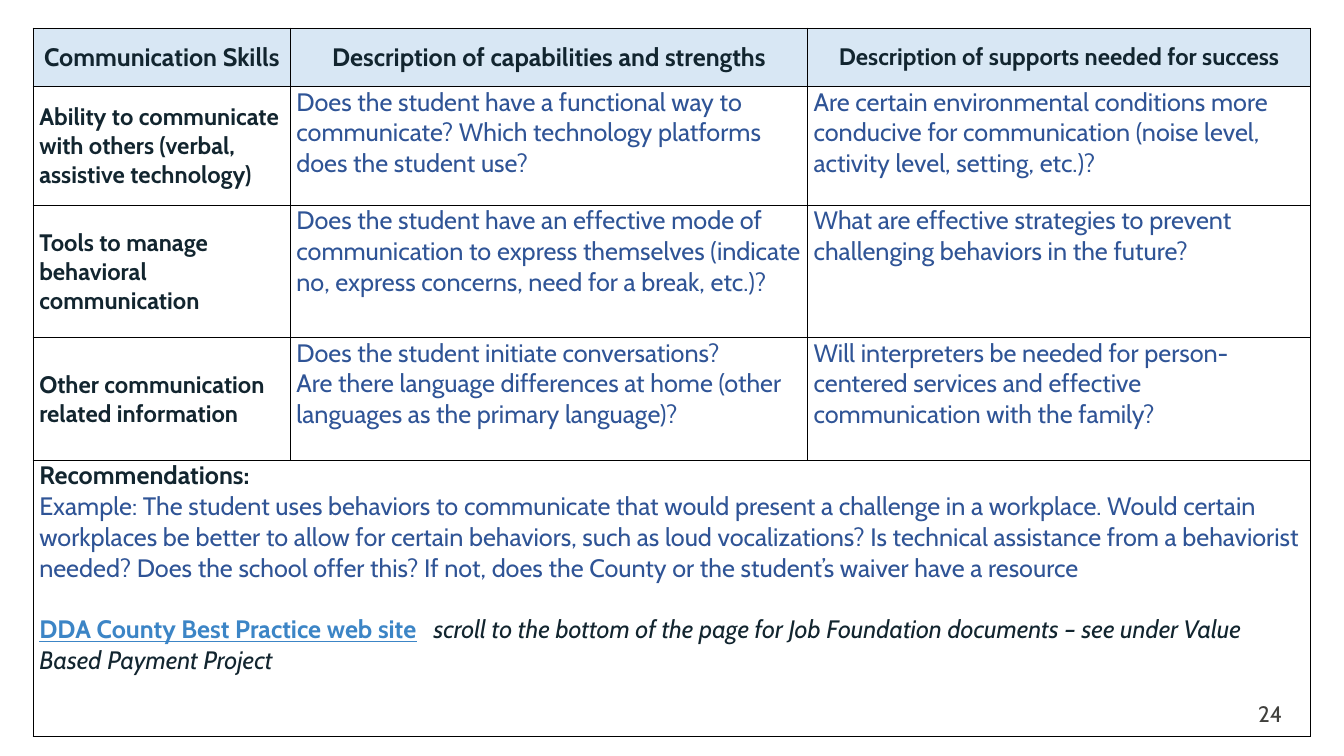
from lxml import etree
from pptx import Presentation
from pptx import util as u
from pptx.dml import color
from pptx.enum import text
from pptx.oxml import ns

FONT = "Cabin"
COLOURS = {
    "ink": "12252F",
    "prompt": "2F5496",
    "link": "3C85C6",
    "header": "D8E7F4",
    "border": "000000",
    "number": "40403D",
}
COLUMN_WIDTHS = [2.55, 5.13, 4.99]
ROW_HEIGHTS = [0.58, 1.18, 1.31, 1.22, 2.74]
HEADINGS = [
    ("Communication Skills", 18),
    ("Description of capabilities and strengths", 18),
    ("Description of supports needed for success", 17),
]
SKILLS = [
    (
        "Ability to communicate with others (verbal, assistive technology)",
        "Does the student have a functional way to communicate? "
        "Which technology platforms does the student use?",
        "Are certain environmental conditions more conducive for communication "
        "(noise level, activity level, setting, etc.)?",
    ),
    (
        "Tools to manage behavioral communication",
        "Does the student have an effective mode of communication to express "
        "themselves (indicate no, express concerns, need for a break, etc.)?",
        "What are effective strategies to prevent challenging behaviors in the future?",
    ),
    (
        "Other communication related information",
        "Does the student initiate conversations?\n"
        "Are there language differences at home (other languages as the primary language)?",
        "Will interpreters be needed for person-centered services and effective "
        "communication with the family?",
    ),
]
EXAMPLE = (
    "Example: The student uses behaviors to communicate that would present a challenge "
    "in a workplace. Would certain workplaces be better to allow for certain behaviors, "
    "such as loud vocalizations? Is technical assistance from a behaviorist needed? "
    "Does the school offer this? If not, does the County or the student’s waiver "
    "have a resource"
)
SITE = "DDA County Best Practice web site"
SITE_HINT = (
    "\tscroll to the bottom of the page for Job Foundation documents – "
    "see under Value Based Payment Project"
)


def rgb(name):
    return color.RGBColor.from_string(COLOURS[name])


def style_span(span, size, colour, bold=False, italic=False, underline=False):
    font = span.font
    font.name, font.size = FONT, u.Pt(size)
    font.bold, font.italic, font.underline = bold, italic, underline
    font.color.rgb = rgb(colour)


def write(frame, words, size, colour, bold=False, align=text.PP_ALIGN.LEFT):
    frame.text = words
    for para in frame.paragraphs:
        para.alignment = align
        for span in para.runs:
            style_span(span, size, colour, bold)


def add_border(cell):
    properties = cell._tc.get_or_add_tcPr()
    for side in ("a:lnL", "a:lnR", "a:lnT", "a:lnB"):
        line = etree.SubElement(properties, ns.qn(side), w=str(u.Pt(1)))
        fill = etree.SubElement(line, ns.qn("a:solidFill"))
        etree.SubElement(fill, ns.qn("a:srgbClr"), val=COLOURS["border"])


def add_tab_stop(para, position):
    stops = etree.SubElement(para._p.get_or_add_pPr(), ns.qn("a:tabLst"))
    etree.SubElement(stops, ns.qn("a:tab"), pos=str(position), algn="l")


def add_grid(page):
    frame = page.shapes.add_table(
        len(ROW_HEIGHTS), len(COLUMN_WIDTHS), u.Inches(0.33), u.Inches(0.28),
        u.Inches(sum(COLUMN_WIDTHS)), u.Inches(sum(ROW_HEIGHTS)),
    )
    table = frame.table
    table.horz_banding = False
    for column, width in zip(table.columns, COLUMN_WIDTHS):
        column.width = u.Inches(width)
    for row, height in zip(table.rows, ROW_HEIGHTS):
        row.height = u.Inches(height)
    for cell in table.iter_cells():
        cell.margin_left = cell.margin_right = u.Inches(0.06)
        cell.margin_top = cell.margin_bottom = 0
        add_border(cell)
        cell.fill.background()
    return table


def fill_headings(table):
    for column, (words, size) in enumerate(HEADINGS):
        cell = table.cell(0, column)
        cell.fill.solid()
        cell.fill.fore_color.rgb = rgb("header")
        cell.vertical_anchor = text.MSO_ANCHOR.MIDDLE
        write(cell.text_frame, words, size, "ink", True, text.PP_ALIGN.CENTER)


def fill_skills(table):
    for row, (skill, *prompts) in enumerate(SKILLS, start=1):
        label = table.cell(row, 0)
        label.vertical_anchor = text.MSO_ANCHOR.MIDDLE
        write(label.text_frame, skill, 17, "ink", True)
        for column, prompt in enumerate(prompts, start=1):
            write(table.cell(row, column).text_frame, prompt, 18, "prompt")


def fill_recommendations(table):
    last = len(ROW_HEIGHTS) - 1
    cell = table.cell(last, 0)
    cell.merge(table.cell(last, len(COLUMN_WIDTHS) - 1))
    frame = cell.text_frame
    write(frame, "Recommendations:\n" + EXAMPLE, 18, "prompt")
    style_span(frame.paragraphs[0].runs[0], 18, "ink", bold=True)
    para = frame.add_paragraph()
    para.space_before = u.Pt(22)
    add_tab_stop(para, u.Inches(3.91))
    para.text = SITE
    style_span(para.runs[0], 18, "link", bold=True, underline=True)
    hint = para.add_run()
    hint.text = SITE_HINT
    style_span(hint, 18, "ink", italic=True)


def add_page_number(page, number):
    box = page.shapes.add_textbox(
        u.Inches(12.38), u.Inches(6.9), u.Inches(0.7), u.Inches(0.4)
    )
    box.text_frame.word_wrap = True
    write(box.text_frame, number, 16, "number")


def main():
    deck = Presentation()
    deck.slide_width, deck.slide_height = u.Inches(13.33), u.Inches(7.5)
    page = deck.slides.add_slide(deck.slide_layouts[6])
    table = add_grid(page)
    fill_headings(table)
    fill_skills(table)
    fill_recommendations(table)
    add_page_number(page, "24")
    deck.save("out.pptx")


if __name__ == "__main__":
    main()
